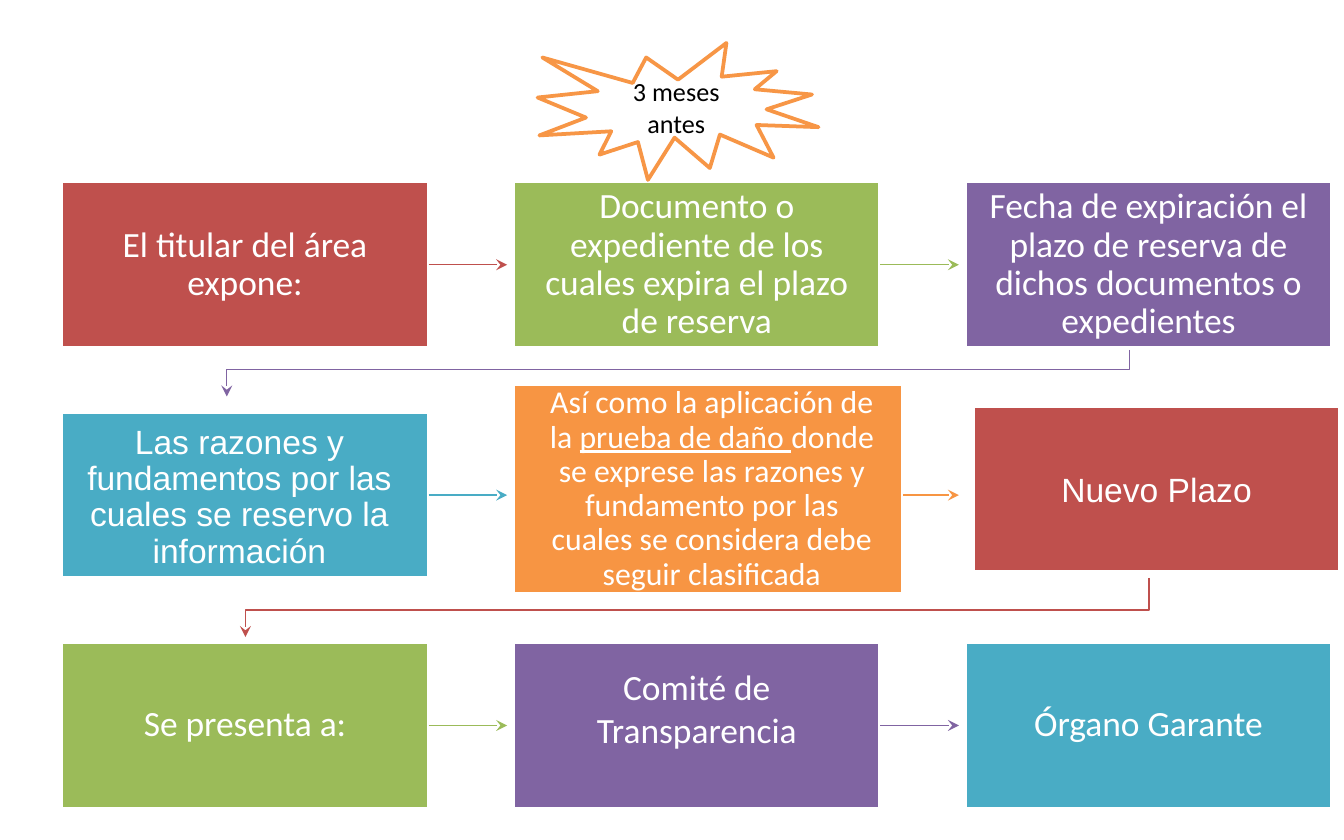
import pptx
import pptx.util
import pptx.dml.color
import pptx.enum.shapes
import pptx.enum.text
import pptx.oxml.ns
import lxml.etree

Pt = pptx.util.Pt
Shapes = pptx.enum.shapes.MSO_SHAPE

COLORS = {
    "red": "BF504D", "green": "9BBB59", "purple": "8064A2", "blue": "49ACC5",
    "orange": "F79543", "burst": "F79646", "white": "FFFFFF", "black": "000000",
}

# Grid of steps: three columns by three rows
LEFT, TOP = 33, 97.2
STEP_X, STEP_Y = 242, 123.4
BOX_WIDTH, BOX_HEIGHT = 196.6, 89.3
ARROW_END_GAP = 3.3

# Content, in reading order; "frame" replaces the grid position,
# "insets" are left, top, right, bottom
STEPS = [
    dict(text=["El titular del área expone:"], color="red"),
    dict(text=["Documento o expediente de los cuales expira el plazo de reserva"],
         color="green"),
    dict(text=["Fecha de expiración el plazo de reserva de dichos documentos o expedientes"],
         color="purple"),
    dict(text=["Las razones y fundamentos por las cuales se reservo la información"],
         color="blue", format=dict(font="Arial", size=18, insets=(8, 12, 14, 9))),
    dict(text=["Así como la aplicación de la ", "prueba de daño ",
               "donde se exprese las razones y fundamento por las cuales se "
               "considera debe seguir clasificada"],
         color="orange", frame=(275, 206, 208.8, 112.3),
         format=dict(size=17, insets=(15, 11, 11, 11), underlined=1)),
    dict(text=["Nuevo Plazo"], color="red", frame=(521.3, 217.4, BOX_WIDTH, BOX_HEIGHT),
         format=dict(font="Arial", size=18, spacing=1.0)),
    dict(text=["Se presenta a:"], color="green"),
    dict(text=["Comité de Transparencia"], color="purple",
         format=dict(spacing=1.0, insets=(11, 11, 11, 30))),
    dict(text=["Órgano Garante"], color="blue"),
]

# Bent arrows from the end of one row to the start of the next
ROW_RETURNS = [
    dict(color="purple", start=(605, 187.5), turn=198, end=(121.5, 212.4)),
    dict(color="red", start=(615.6, 309.6), turn=326.9, end=(131.5, 341.3)),
]


def rgb(name):
    return pptx.dml.color.RGBColor.from_string(COLORS[name])


def write_text(shape, runs, font="Calibri", size=19, color="white", spacing=0.9,
               insets=(11, 11, 11, 11), underlined=None):
    frame = shape.text_frame
    frame.word_wrap = True
    frame.vertical_anchor = pptx.enum.text.MSO_ANCHOR.MIDDLE
    (frame.margin_left, frame.margin_top,
     frame.margin_right, frame.margin_bottom) = map(Pt, insets)
    paragraph = frame.paragraphs[0]
    paragraph.alignment = pptx.enum.text.PP_ALIGN.CENTER
    paragraph.line_spacing = spacing
    for index, text in enumerate(runs):
        run = paragraph.add_run()
        run.text = text
        run.font.name = font
        run.font.size = Pt(size)
        run.font.color.rgb = rgb(color)
        if index == underlined:
            run.font.underline = True


def add_filled_shape(slide, kind, frame, fill, line):
    shape = slide.shapes.add_shape(kind, *map(Pt, frame))
    shape.shadow.inherit = False
    shape.fill.solid()
    shape.fill.fore_color.rgb = rgb(fill)
    shape.line.color.rgb = rgb(line)
    shape.line.width = Pt(2)
    return shape


def style_arrow(arrow, color):
    arrow.line.color.rgb = rgb(color)
    arrow.line.width = Pt(0.75)
    qn = pptx.oxml.ns.qn
    properties = arrow._element.spPr
    lxml.etree.SubElement(properties.find(qn("a:ln")), qn("a:tailEnd"), type="stealth")
    if properties.find(qn("a:effectLst")) is None:
        lxml.etree.SubElement(properties, qn("a:effectLst"))


def add_next_arrow(slide, box, box_frame, column, row, color):
    left, top, width, height = box_frame
    middle = TOP + row * STEP_Y + BOX_HEIGHT / 2
    end = LEFT + (column + 1) * STEP_X - ARROW_END_GAP
    arrow = slide.shapes.add_connector(
        pptx.enum.shapes.MSO_CONNECTOR.STRAIGHT,
        Pt(left + width), Pt(middle), Pt(end), Pt(middle))
    if abs(top + height / 2 - middle) < 0.1:
        arrow.begin_connect(box, 3)
    style_arrow(arrow, color)


def add_row_return(slide, color, start, turn, end):
    builder = slide.shapes.build_freeform(Pt(start[0]), Pt(start[1]))
    corners = [(start[0], turn), (end[0], turn), end]
    builder.add_line_segments([(Pt(x), Pt(y)) for x, y in corners], close=False)
    arrow = builder.convert_to_shape()
    arrow.shadow.inherit = False
    arrow.fill.background()
    style_arrow(arrow, color)


def main():
    presentation = pptx.Presentation()
    presentation.slide_width = Pt(720)
    presentation.slide_height = Pt(450)
    slide = presentation.slides.add_slide(presentation.slide_layouts[6])

    # Steps and the arrows between neighbours
    for index, step in enumerate(STEPS):
        row, column = divmod(index, 3)
        grid_frame = (LEFT + column * STEP_X, TOP + row * STEP_Y, BOX_WIDTH, BOX_HEIGHT)
        frame = step.get("frame", grid_frame)
        box = add_filled_shape(slide, Shapes.RECTANGLE, frame, step["color"], "white")
        write_text(box, step["text"], **step.get("format", {}))
        if column < 2:
            add_next_arrow(slide, box, frame, column, row, step["color"])

    # Arrows to the next row
    for row_return in ROW_RETURNS:
        add_row_return(slide, **row_return)

    # Deadline burst
    burst = add_filled_shape(slide, Shapes.EXPLOSION1, (288, 23, 150.5, 73.4),
                             "white", "burst")
    write_text(burst, ["3 meses antes"], size=14, color="black", spacing=1.0,
               insets=(7.2, 3.6, 7.2, 3.6))

    presentation.save("out.pptx")


if __name__ == "__main__":
    main()
